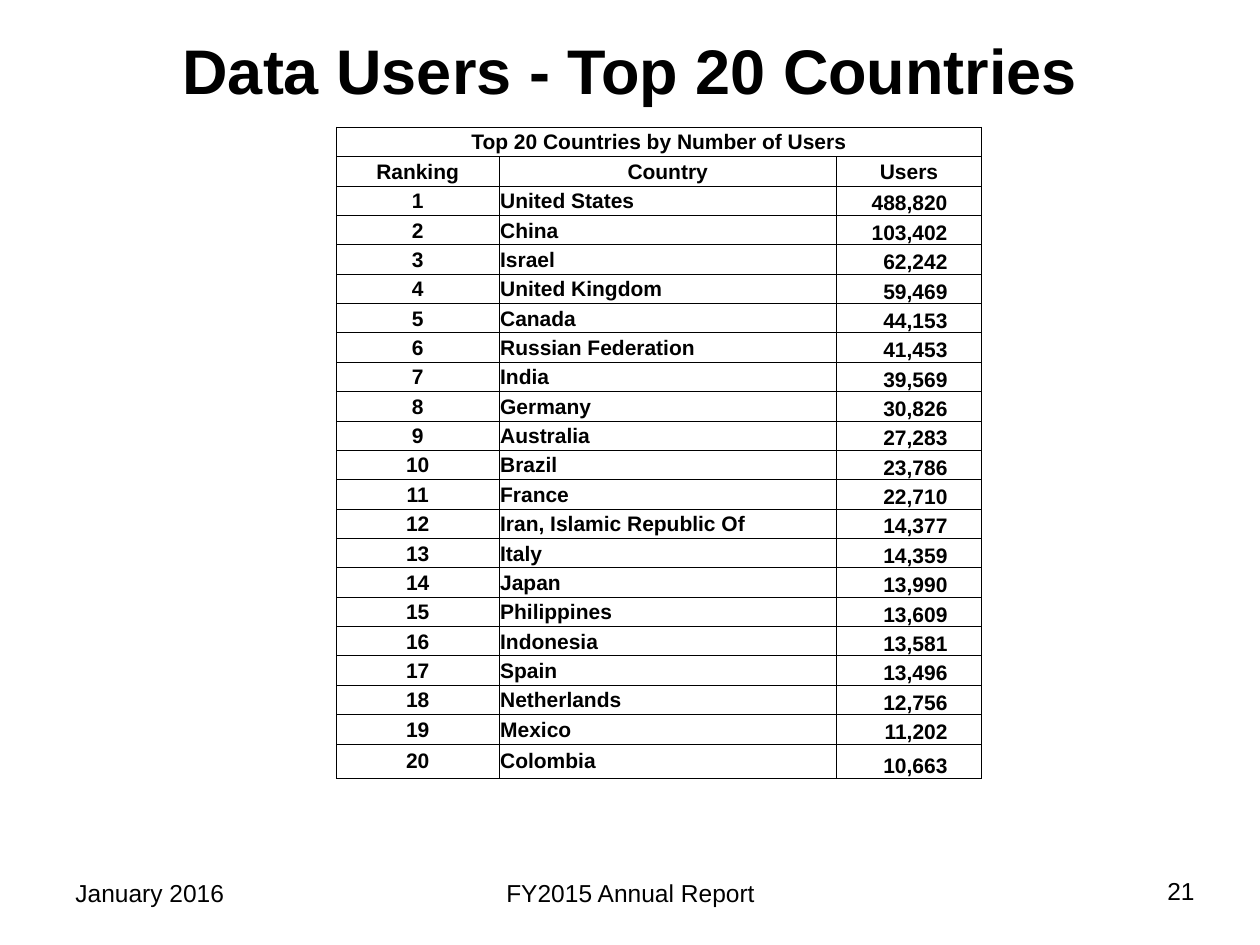
from dataclasses import dataclass

from lxml.etree import SubElement
from pptx import Presentation
from pptx.dml.color import RGBColor
from pptx.enum.text import MSO_ANCHOR, PP_ALIGN
from pptx.oxml.ns import qn
from pptx.slide import Slide
from pptx.table import _Cell
from pptx.text.text import TextFrame
from pptx.util import Inches, Pt

BLACK = RGBColor(0, 0, 0)
LEFT, MID, RIGHT = PP_ALIGN.LEFT, PP_ALIGN.CENTER, PP_ALIGN.RIGHT
WIDE, HIGH = Inches(10), Inches(7.5)
COLS, ROWS = 100, 75


@dataclass(frozen=True)
class Box:
    left: float
    top: float
    wide: float
    high: float

    def place(self) -> tuple[int, int, int, int]:
        return (
            int(WIDE * self.left / COLS),
            int(HIGH * self.top / ROWS),
            int(WIDE * self.wide / COLS),
            int(HIGH * self.high / ROWS),
        )


@dataclass(frozen=True)
class Label:
    text: str
    box: Box
    align: PP_ALIGN
    size: int = 14
    bold: bool = False
    anchor: MSO_ANCHOR = MSO_ANCHOR.TOP


@dataclass(frozen=True)
class Nation:
    name: str
    users: int


LABELS = [
    Label("Data Users - Top 20 Countries", Box(5.4, 0.9, 89.2, 9.2), MID, 36, True, MSO_ANCHOR.MIDDLE),
    Label("21", Box(72.5, 69, 23.3, 5.2), RIGHT),
    Label("January 2016", Box(5, 69.2, 23.3, 5.2), LEFT),
    Label("FY2015 Annual Report", Box(34.2, 69.2, 31.7, 5.2), MID),
]
NATIONS = [
    Nation("United States", 488820),
    Nation("China", 103402),
    Nation("Israel", 62242),
    Nation("United Kingdom", 59469),
    Nation("Canada", 44153),
    Nation("Russian Federation", 41453),
    Nation("India", 39569),
    Nation("Germany", 30826),
    Nation("Australia", 27283),
    Nation("Brazil", 23786),
    Nation("France", 22710),
    Nation("Iran, Islamic Republic Of", 14377),
    Nation("Italy", 14359),
    Nation("Japan", 13990),
    Nation("Philippines", 13609),
    Nation("Indonesia", 13581),
    Nation("Spain", 13496),
    Nation("Netherlands", 12756),
    Nation("Mexico", 11202),
    Nation("Colombia", 10663),
]
HEADS = ["Ranking", "Country", "Users"]
GRID = Box(26.7, 10.1, 51.2, 51.7)
WIDTHS = [12.9, 26.8, 11.5]
LAST = 2.7


def write(frame: TextFrame, text: str, *, align: PP_ALIGN, size: int = 12, bold: bool = True) -> None:
    line = frame.paragraphs[0]
    line.alignment = align
    run = line.add_run()
    run.text = text
    font = run.font
    font.name, font.size, font.bold = "Arial", Pt(size), bold
    font.color.rgb = BLACK


def add_label(slide: Slide, label: Label) -> None:
    frame = slide.shapes.add_textbox(*label.box.place()).text_frame
    frame.word_wrap = True
    frame.vertical_anchor = label.anchor
    write(frame, label.text, align=label.align, size=label.size, bold=label.bold)


def frame_cell(cell: _Cell) -> None:
    cell.margin_left = cell.margin_right = cell.margin_top = Inches(0.01)
    cell.margin_bottom = 0
    cell.vertical_anchor = MSO_ANCHOR.MIDDLE
    props = cell._tc.get_or_add_tcPr()
    for side in ("a:lnL", "a:lnR", "a:lnT", "a:lnB"):
        edge = SubElement(props, qn(side), w=str(Pt(0.5)))
        fill = SubElement(edge, qn("a:solidFill"))
        SubElement(fill, qn("a:srgbClr"), val=str(BLACK))
    cell.fill.background()


def add_grid(slide: Slide) -> None:
    count = len(NATIONS) + 2
    table = slide.shapes.add_table(count, len(HEADS), *GRID.place()).table
    table.first_row = table.horz_banding = False
    for col, wide in zip(table.columns, WIDTHS):
        col.width = int(WIDE * wide / COLS)
    for row in table.rows:
        row.height = int(HIGH * (GRID.high - LAST) / (count - 1) / ROWS)
    table.rows[count - 1].height = int(HIGH * LAST / ROWS)
    for cell in table.iter_cells():
        frame_cell(cell)

    table.cell(0, 0).merge(table.cell(0, 2))
    write(table.cell(0, 0).text_frame, "Top 20 Countries by Number of Users", align=MID)
    for col, head in enumerate(HEADS):
        write(table.cell(1, col).text_frame, head, align=MID)
    for rank, nation in enumerate(NATIONS, 1):
        texts = [str(rank), nation.name, f"{nation.users:,}"]
        for col, (text, align) in enumerate(zip(texts, (MID, LEFT, RIGHT))):
            write(table.cell(rank + 1, col).text_frame, text, align=align)
        users = table.cell(rank + 1, 2)
        users.vertical_anchor = MSO_ANCHOR.BOTTOM
        users.margin_right = Inches(0.27)


def main() -> None:
    deck = Presentation()
    deck.slide_width, deck.slide_height = WIDE, HIGH
    slide = deck.slides.add_slide(deck.slide_layouts[6])
    for label in LABELS:
        add_label(slide, label)
    add_grid(slide)
    deck.save("out.pptx")


if __name__ == "__main__":
    main()
